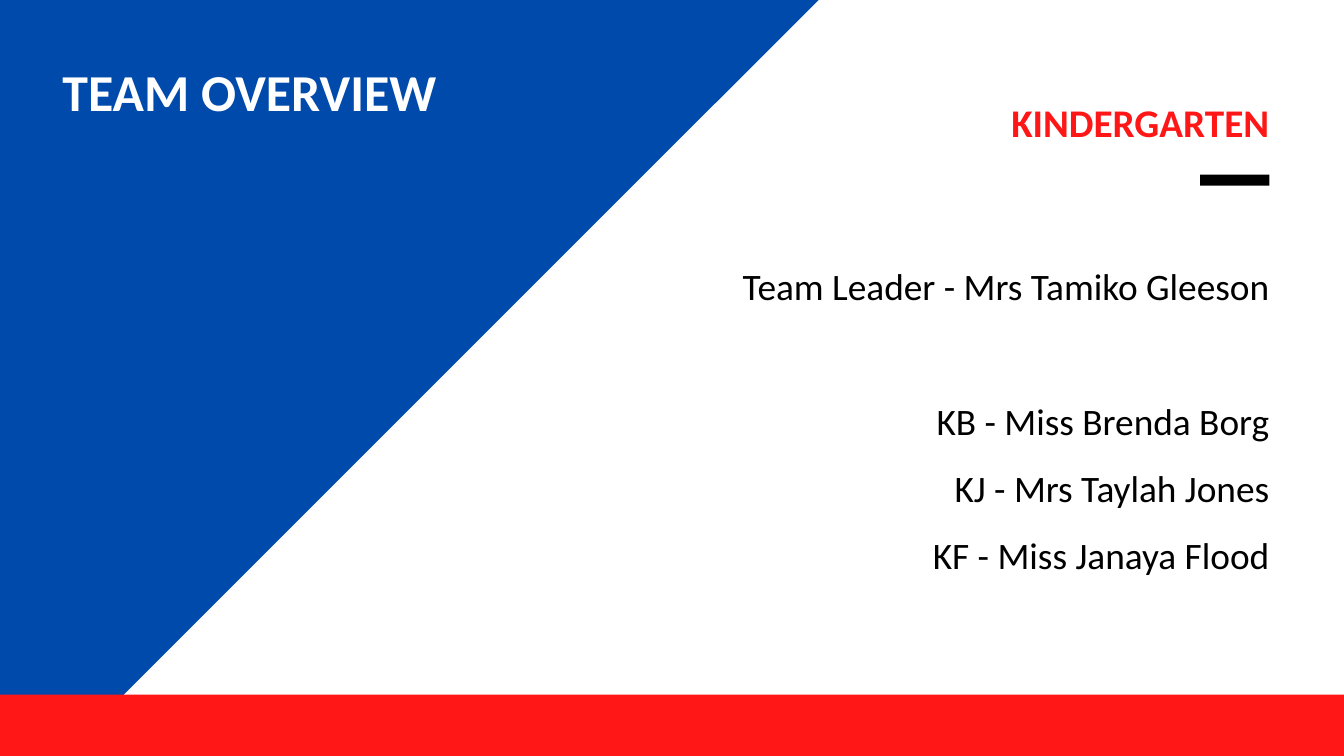
from pptx import Presentation
from pptx.dml.color import RGBColor
from pptx.enum.shapes import MSO_SHAPE
from pptx.enum.text import PP_ALIGN
from pptx.util import Cm, Pt

WIDTH, HEIGHT = 50.8, 28.58
BAND_TOP = 26.26
RIGHT_EDGE = 47.98
BLUE, RED, BLACK, WHITE = "004AAC", "FF1616", "000000", "FFFFFF"


def color(hex_string):
    return RGBColor.from_string(hex_string)


def paint(shape, fill):
    shape.shadow.inherit = False
    shape.fill.solid()
    shape.fill.fore_color.rgb = color(fill)
    shape.line.fill.background()


def add_bar(slide, left, top, width, height, fill):
    bar = slide.shapes.add_shape(
        MSO_SHAPE.RECTANGLE, Cm(left), Cm(top), Cm(width), Cm(height))
    paint(bar, fill)


def add_text(slide, left, top, width, height, lines, size, fill, bold=False,
             align=PP_ALIGN.LEFT, line_spacing=1.0, inset_top=0.0):
    """Add a text box with one paragraph per line and return its paragraphs."""
    box = slide.shapes.add_textbox(Cm(left), Cm(top), Cm(width), Cm(height))
    text_frame = box.text_frame
    text_frame.word_wrap = True
    text_frame.margin_left = text_frame.margin_right = text_frame.margin_bottom = 0
    text_frame.margin_top = Cm(inset_top)
    text_frame.text = "\n".join(lines)
    for paragraph in text_frame.paragraphs:
        paragraph.alignment = align
        paragraph.line_spacing = line_spacing
        for run in paragraph.runs:
            run.font.name = "Calibri"
            run.font.size = Pt(size)
            run.font.bold = bold
            run.font.color.rgb = color(fill)
    return text_frame.paragraphs


def add_title_panel(slide, left, top, width, height):
    """Draw the slanted blue panel, which narrows towards the bottom, and its title."""
    bottom_width = 2.36
    builder = slide.shapes.build_freeform(Cm(left), Cm(top))
    builder.add_line_segments([
        (Cm(left + width), Cm(top)),
        (Cm(left + bottom_width), Cm(top + height)),
        (Cm(left), Cm(top + height)),
    ])
    paint(builder.convert_to_shape(), BLUE)
    add_text(slide, left + 2.36, top + 1.75, 17.1, 5.26, ["TEAM OVERVIEW"],
             55.5, WHITE, bold=True, line_spacing=1.09, inset_top=0.3)


def add_team(slide, left, top, width, heading, leader, teachers):
    """Place a right-aligned heading, its rule, the team leader and the teachers."""
    rule_width = 2.62
    add_text(slide, left, top, width, 2.08, [heading], 42, RED, bold=True,
             align=PP_ALIGN.RIGHT, line_spacing=1.04, inset_top=0.28)
    add_bar(slide, left + width - rule_width, top + 3.25, rule_width, 0.42, BLACK)
    paragraphs = add_text(slide, left, top + 5.74, width, 14.58, [leader, *teachers],
                          40, BLACK, align=PP_ALIGN.RIGHT, line_spacing=1.5)
    paragraphs[0].space_after = Pt(73)


def main():
    presentation = Presentation()
    presentation.slide_width = Cm(WIDTH)
    presentation.slide_height = Cm(HEIGHT)
    slide = presentation.slides.add_slide(presentation.slide_layouts[6])

    team_left = 25.17
    add_team(slide, team_left, 3.35, RIGHT_EDGE - team_left, "KINDERGARTEN",
             "Team Leader - Mrs Tamiko Gleeson",
             ["KB - Miss Brenda Borg", "KJ - Mrs Taylah Jones", "KF - Miss Janaya Flood"])
    add_title_panel(slide, 0, 0, 30.94, HEIGHT)
    add_bar(slide, 0, BAND_TOP, WIDTH, HEIGHT - BAND_TOP, RED)
    presentation.save("out.pptx")


if __name__ == "__main__":
    main()
